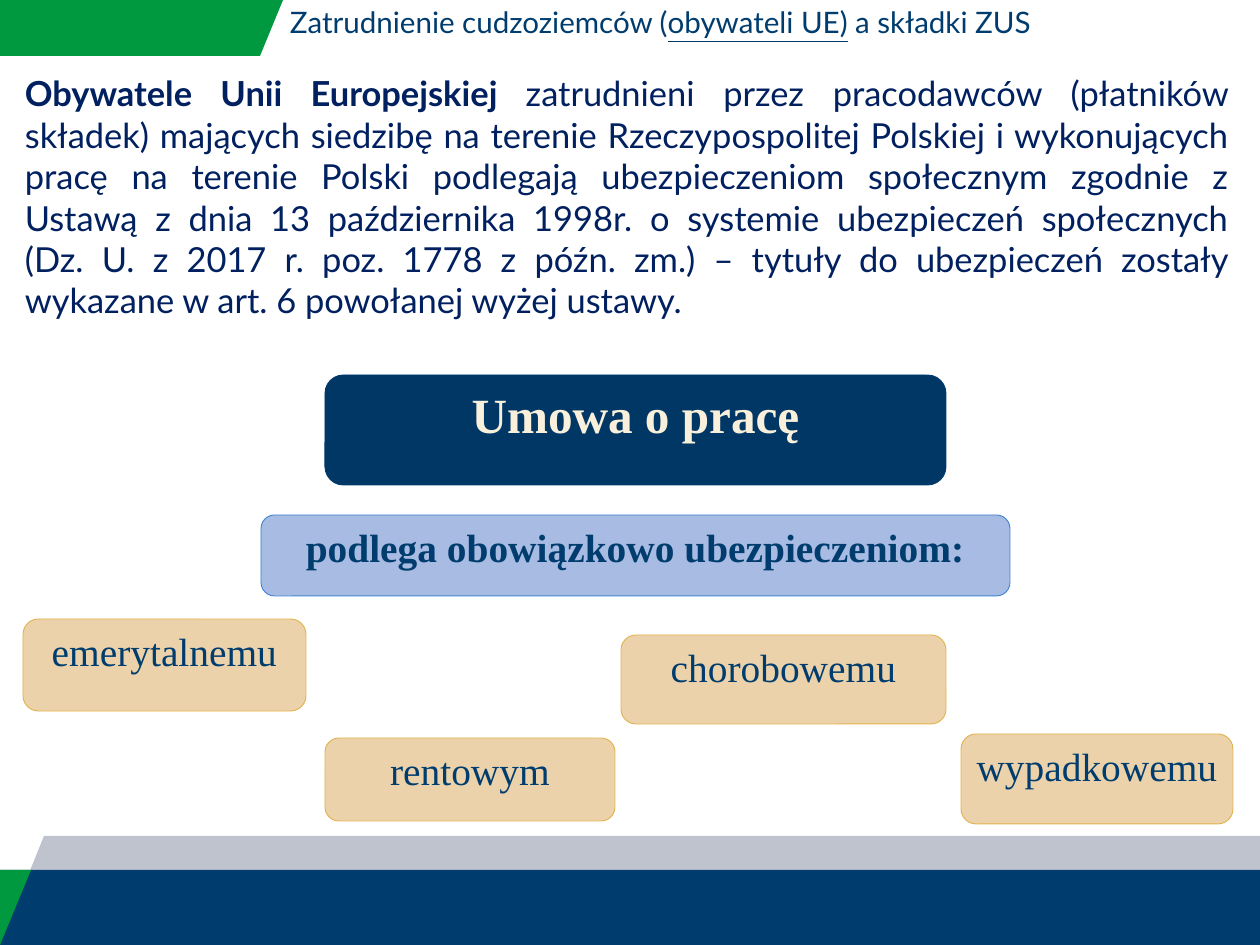
from pptx import Presentation
from pptx import util as u
from pptx.dml.color import RGBColor
from pptx.enum import shapes, text
from pptx.oxml.ns import qn

PX = 10320  # EMU in one px
WIDTH, HEIGHT = 1260, 945
NAVY, GREEN, GREY = "003D6E", "00993F", "BEC3CE"
SAND, GOLD = "ECD2AA", "E1B34F"


def px(length):
    return u.Emu(length * PX)


def colour(value):
    return RGBColor.from_string(value)


def place(item, box):
    item.left, item.top, item.width, item.height = map(px, box)


def set_font(font, name, size, value, bold=False):
    font.name, font.size, font.bold = name, u.Pt(size), bold
    font.color.rgb = colour(value)


def paint(shape, fill, line=None):
    shape.shadow.inherit = False
    shape.fill.solid()
    shape.fill.fore_color.rgb = colour(fill)
    if line:
        shape.line.color.rgb = colour(line)
        shape.line.width = u.Pt(0.75)
    else:
        shape.line.fill.background()


def add_outline(page, points, fill):
    builder = page.shapes.build_freeform(*points[0], scale=PX)
    builder.add_line_segments(points[1:], close=True)
    paint(builder.convert_to_shape(), fill)


def add_header_band(page, box):
    left, top, width, height = box
    right, bottom = left + width, top + height
    add_outline(page, [(left, top), (right, top), (right - 23, bottom), (left, bottom)], GREEN)


def add_footer(page, box):
    left, top, width, height = box
    right, bottom = left + width, top + height
    bar_top = top + 34
    add_outline(page, [(left, bottom), (left + 44, top), (right, top), (right, bottom)], GREY)
    bar = page.shapes.add_shape(shapes.MSO_SHAPE.RECTANGLE, px(left), px(bar_top),
                                px(width), px(bottom - bar_top))
    paint(bar, NAVY)
    add_outline(page, [(left, bar_top), (left + 31, bar_top), (left, bottom)], GREEN)


def fill_placeholder(holder, box, lines, size, value, align):
    """Each line is a list of spans: (words, bold, underline)."""
    place(holder, box)
    frame = holder.text_frame
    frame.word_wrap = True
    frame.auto_size = text.MSO_AUTO_SIZE.NONE
    frame.vertical_anchor = text.MSO_ANCHOR.TOP
    para = frame.paragraphs[0]
    props = para._p.get_or_add_pPr()
    props.set("marL", "0")
    props.set("indent", "0")
    props.append(props.makeelement(qn("a:buNone"), {}))
    para.alignment = align
    para.space_before = u.Pt(0)
    set_font(para.font, "Lato", size, value)
    for number, spans in enumerate(lines):
        if number:
            para.add_line_break()
        for words, bold, underline in spans:
            span = para.add_run()
            span.text = words
            set_font(span.font, "Lato", size, value, bold)
            span.font.underline = underline


def add_card(page, box, words, size, value, fill, line, bold=False):
    card = page.shapes.add_shape(shapes.MSO_SHAPE.ROUNDED_RECTANGLE, *map(px, box))
    paint(card, fill, line)
    frame = card.text_frame
    frame.word_wrap = True
    frame.vertical_anchor = text.MSO_ANCHOR.TOP
    frame.margin_left = frame.margin_right = px(4)
    frame.margin_top = px(4)
    para = frame.paragraphs[0]
    para.text = words
    para.alignment = text.PP_ALIGN.CENTER
    set_font(para.font, "Times New Roman", size, value, bold)


def add_insurance_diagram(page, box):
    left, top = box[:2]
    # Contract and the rule that applies to it
    add_card(page, (left + 302, top, 621, 110), "Umowa o pracę",
             40, "F9F0DC", "003764", NAVY, True)
    add_card(page, (left + 238, top + 140, 749, 81), "podlega obowiązkowo ubezpieczeniom:",
             32, NAVY, "A7BBE3", "3F84D2", True)
    # Kinds of insurance
    kinds = [("emerytalnemu", 0, 244, 283, 92), ("rentowym", 302, 363, 290, 83),
             ("chorobowemu", 598, 260, 325, 89), ("wypadkowemu", 938, 359, 272, 90)]
    for words, across, down, width, height in kinds:
        add_card(page, (left + across, top + down, width, height), words, 32, NAVY, SAND, GOLD)


def main():
    deck = Presentation()
    deck.slide_width, deck.slide_height = px(WIDTH), px(HEIGHT)
    page = deck.slides.add_slide(deck.slide_layouts[1])

    # Frame
    add_header_band(page, (0, 0, 283, 56))
    add_footer(page, (0, 836, WIDTH, HEIGHT - 836))

    # Title and legal basis
    fill_placeholder(page.shapes.title, (281, 0, 796, 90),
                     [[("Zatrudnienie cudzoziemców (", False, False),
                       ("obywateli UE)", False, True),
                       (" a składki ZUS", False, False)]],
                     24, NAVY, text.PP_ALIGN.LEFT)
    fill_placeholder(page.placeholders[1], (16, 68, 1221, 286),
                     [[("Obywatele Unii Europejskiej ", True, False),
                       ("zatrudnieni przez pracodawców (płatników składek) mających siedzibę "
                        "na terenie Rzeczypospolitej Polskiej i wykonujących pracę na terenie "
                        "Polski podlegają ubezpieczeniom społecznym zgodnie z Ustawą z dnia "
                        "13 października 1998r. o systemie ubezpieczeń społecznych",
                        False, False)],
                      [("(Dz. U. z 2017 r. poz. 1778 z późn. zm.) – tytuły do ubezpieczeń "
                        "zostały wykazane w art. 6 powołanej wyżej ustawy.", False, False)]],
                     28, "002060", text.PP_ALIGN.JUSTIFY)

    # Diagram
    add_insurance_diagram(page, (23, 375, 1210, 450))
    deck.save("out.pptx")


if __name__ == "__main__":
    main()
